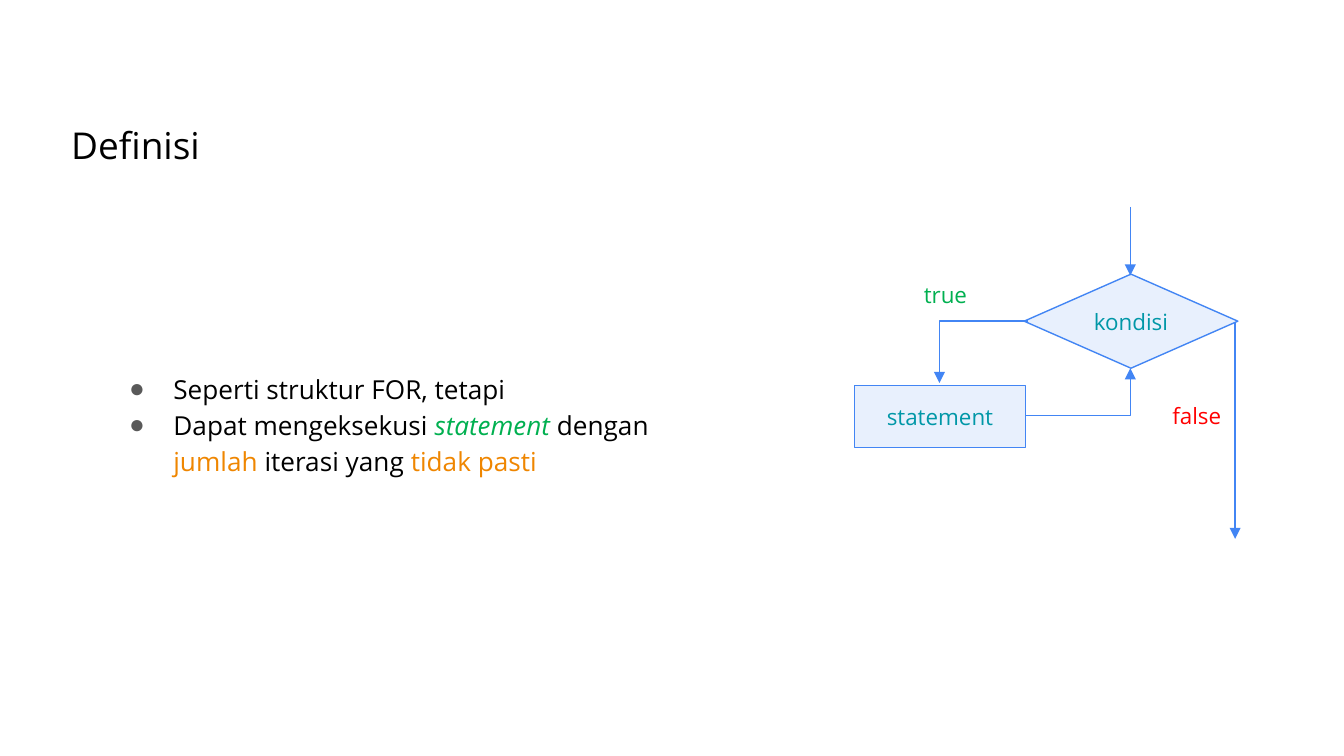
from dataclasses import dataclass

from lxml import etree
from pptx import Presentation
from pptx.dml.color import RGBColor
from pptx.enum import shapes, text
from pptx.oxml import ns
from pptx.util import Inches, Pt


@dataclass(frozen=True)
class Theme:
    font: str = "Open Sans"
    title_size: float = 19.8
    body_size: float = 14
    label_size: float = 12
    line_width: float = 0.75
    ink: str = "000000"
    bullet: str = "595959"
    green: str = "00B050"
    orange: str = "EF8600"
    red: str = "FF0000"
    teal: str = "0097A7"
    blue: str = "4285F4"
    node: str = "8EB6F8"
    node_alpha: int = 20


THEME = Theme()


def rgb(value):
    return RGBColor.from_string(value)


def add_xml(parent, tag, **attributes):
    return etree.SubElement(parent, ns.qn(tag), attributes)


def set_font(font, size, color):
    font.name = THEME.font
    font.size = Pt(size)
    font.color.rgb = rgb(color)


def place(item, left, top, width, height):
    item.left, item.top = Inches(left), Inches(top)
    item.width, item.height = Inches(width), Inches(height)


def prepare_frame(frame, inset, anchor):
    frame.word_wrap = True
    frame.auto_size = text.MSO_AUTO_SIZE.NONE
    frame.vertical_anchor = anchor
    frame.margin_left = frame.margin_right = Inches(inset)
    frame.margin_top = frame.margin_bottom = Inches(inset)


def fill_title(title, wording):
    place(title, 0.43, 0.81, 9.14, 0.43)
    prepare_frame(title.text_frame, 0.1, text.MSO_ANCHOR.TOP)
    heading = title.text_frame.paragraphs[0]
    heading.text = wording
    heading.alignment = text.PP_ALIGN.LEFT
    set_font(heading.font, THEME.title_size, THEME.ink)


def add_bullet(paragraph):
    properties = paragraph._p.get_or_add_pPr()
    properties.set("marL", str(Inches(0.5)))
    properties.set("indent", str(Inches(-0.33)))
    paragraph.line_spacing = 1.15
    paragraph.space_before = Pt(0)
    add_xml(add_xml(properties, "a:buClr"), "a:srgbClr", val=THEME.bullet)
    add_xml(properties, "a:buChar", char="●")


def fill_body(body, points):
    place(body, 0.69, 2.64, 4.57, 1.36)
    frame = body.text_frame
    prepare_frame(frame, 0.1, text.MSO_ANCHOR.TOP)
    for index, parts in enumerate(points):
        point = frame.add_paragraph() if index else frame.paragraphs[0]
        add_bullet(point)
        set_font(point.font, THEME.body_size, THEME.ink)
        for wording, color, italic in parts:
            run = point.add_run()
            run.text = wording
            set_font(run.font, THEME.body_size, color)
            run.font.italic = italic


def add_label(slide, kind, box, wording, color):
    label = slide.shapes.add_shape(kind, *map(Inches, box))
    label.shadow.inherit = False
    label.fill.background()
    label.line.fill.background()
    prepare_frame(label.text_frame, 0, text.MSO_ANCHOR.MIDDLE)
    caption = label.text_frame.paragraphs[0]
    caption.text = wording
    caption.alignment = text.PP_ALIGN.CENTER
    set_font(caption.font, THEME.label_size, color)
    return label


def style_line(line):
    line.color.rgb = rgb(THEME.blue)
    line.width = Pt(THEME.line_width)


def add_node(slide, kind, box, wording):
    node = add_label(slide, kind, box, wording, THEME.teal)
    node.fill.solid()
    node.fill.fore_color.rgb = rgb(THEME.node)
    color = node.element.spPr.find(ns.qn("a:solidFill")).find(ns.qn("a:srgbClr"))
    add_xml(color, "a:alpha", val=str(THEME.node_alpha * 1000))
    style_line(node.line)


def finish_arrow(arrow):
    style_line(arrow.line)
    outline = arrow.element.spPr.find(ns.qn("a:ln"))
    add_xml(outline, "a:tailEnd", type="triangle")


def add_straight_arrow(slide, x, top, bottom):
    arrow = slide.shapes.add_connector(
        shapes.MSO_CONNECTOR.STRAIGHT, Inches(x), Inches(top), Inches(x), Inches(bottom))
    finish_arrow(arrow)
    add_xml(arrow.element.spPr, "a:effectLst")


def add_corner_arrow(slide, start, end):
    corner = (end[0], start[1])
    first, *rest = [tuple(map(Inches, point)) for point in (start, corner, end)]
    builder = slide.shapes.build_freeform(*first)
    builder.add_line_segments(rest, close=False)
    arrow = builder.convert_to_shape()
    arrow.fill.background()
    finish_arrow(arrow)
    arrow.shadow.inherit = False


def draw_loop(slide):
    process = shapes.MSO_SHAPE.FLOWCHART_PROCESS
    decision = shapes.MSO_SHAPE.FLOWCHART_DECISION
    add_node(slide, decision, (7.62, 2.04, 1.59, 0.7), "kondisi")
    add_node(slide, process, (6.36, 2.87, 1.27, 0.46), "statement")
    add_straight_arrow(slide, 8.41, 1.54, 2.05)
    add_corner_arrow(slide, (7.65, 2.39), (6.99, 2.85))
    add_corner_arrow(slide, (7.63, 3.09), (8.41, 2.74))
    add_label(slide, process, (6.37, 2.04, 1.33, 0.31), "true", THEME.green)
    add_straight_arrow(slide, 9.19, 2.4, 4.01)
    add_label(slide, process, (8.24, 2.94, 1.33, 0.31), "false", THEME.red)


def main():
    deck = Presentation()
    deck.slide_width = Inches(10)
    deck.slide_height = deck.slide_width * 9 // 16
    slide = deck.slides.add_slide(deck.slide_layouts[1])
    fill_title(slide.shapes.title, "Definisi")
    fill_body(slide.placeholders[1], [
        [("Seperti struktur FOR, tetapi", THEME.ink, False)],
        [
            ("Dapat mengeksekusi ", THEME.ink, False),
            ("statement ", THEME.green, True),
            ("dengan ", THEME.ink, False),
            ("jumlah ", THEME.orange, False),
            ("iterasi yang ", THEME.ink, False),
            ("tidak pasti", THEME.orange, False),
        ],
    ])
    draw_loop(slide)
    deck.save("out.pptx")


if __name__ == "__main__":
    main()
